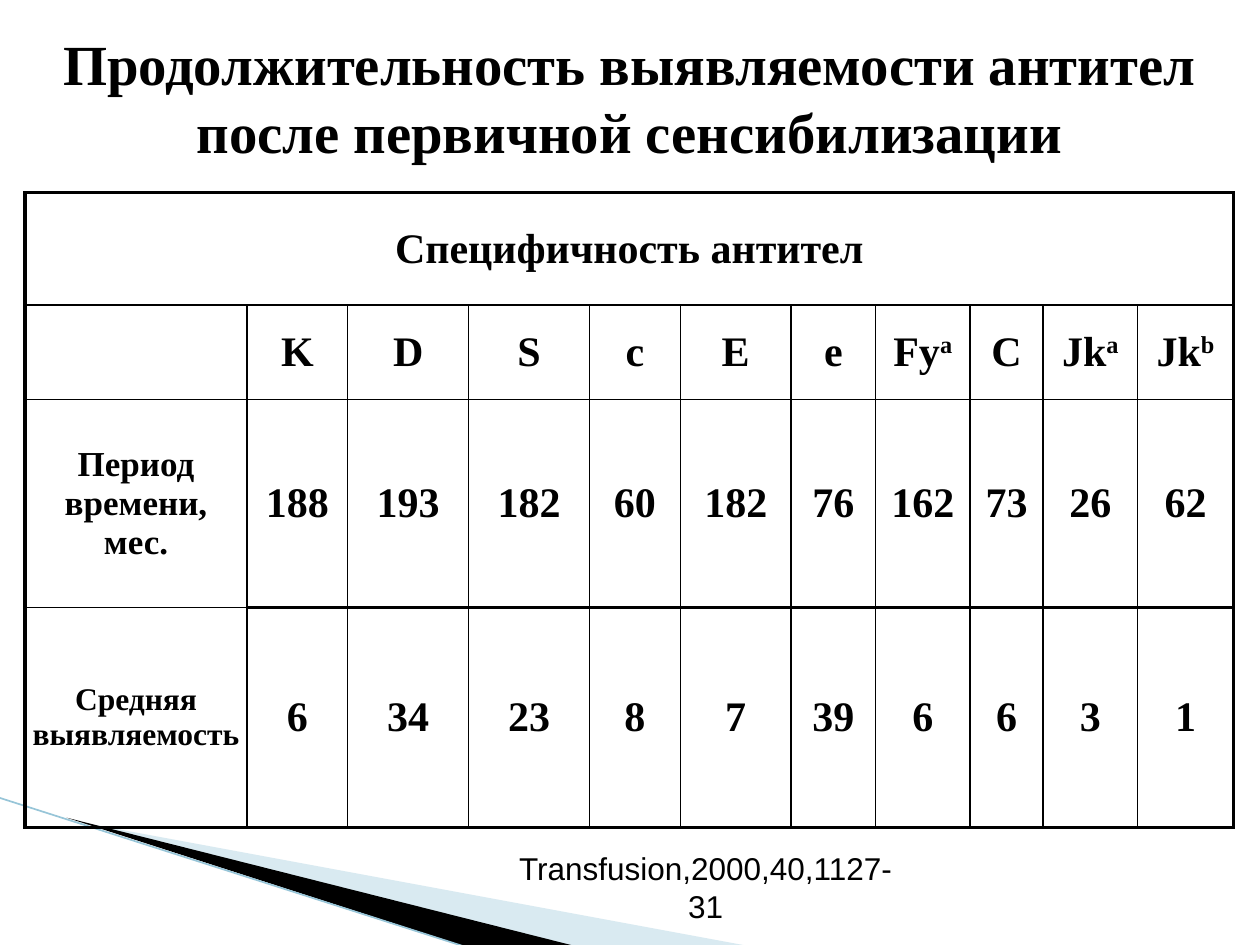
from lxml.etree import SubElement
from pptx import Presentation
from pptx.dml.color import RGBColor
from pptx.enum.shapes import MSO_CONNECTOR
from pptx.enum.text import MSO_ANCHOR, PP_ALIGN
from pptx.oxml import parse_xml
from pptx.oxml.ns import nsdecls, qn
from pptx.util import Inches, Pt

BLACK = RGBColor(0x00, 0x00, 0x00)
PALE_BLUE = RGBColor(0xA0, 0xCB, 0xDC)
LINE_BLUE = RGBColor(0x97, 0xC5, 0xD8)

THICK, THIN = 2.25, 1
COLUMN_WIDTHS = [1.76, 0.8, 0.96, 0.96, 0.72, 0.88, 0.67, 0.75, 0.58, 0.75, 0.76]
ROW_HEIGHTS = [0.89, 0.75, 1.65, 1.75]
HEADING = "Специфичность антител"
ANTIBODIES = ["K", "D", "S", "c", "E", "e", "Fy^a", "C", "Jk^a", "Jk^b"]
PERIODS = [188, 193, 182, 60, 182, 76, 162, 73, 26, 62]
DETECTABILITY = [6, 34, 23, 8, 7, 39, 6, 6, 3, 1]
ROWS = [
    [HEADING] + [""] * len(ANTIBODIES),
    [""] + ANTIBODIES,
    ["Период времени,\nмес."] + PERIODS,
    ["Средняя выявляемость"] + DETECTABILITY,
]
ROW_LABEL_SIZES = {2: 20, 3: 18}


def write_text(frame, text, size, font="Times New Roman", bold=True):
    """Write centred lines; the part after ^ is a superscript."""
    frame.vertical_anchor = MSO_ANCHOR.MIDDLE
    for index, line in enumerate(text.split("\n")):
        paragraph = frame.add_paragraph() if index else frame.paragraphs[0]
        paragraph.alignment = PP_ALIGN.CENTER
        for level, part in enumerate(line.split("^")):
            run = paragraph.add_run()
            run.text = part
            run.font.name, run.font.size, run.font.bold = font, Pt(size), bold
            run.font.color.rgb = BLACK
            if level:
                run.font._element.set("baseline", "30000")


def add_text(slide, box, text, size, wrap=True, **style):
    frame = slide.shapes.add_textbox(*map(Inches, box)).text_frame
    frame.word_wrap = wrap
    write_text(frame, text, size, **style)


def add_wedge(slide, points, color, opacity=100):
    start, *others = [(Inches(x), Inches(y)) for x, y in points]
    builder = slide.shapes.build_freeform(*start)
    builder.add_line_segments(others, close=True)
    wedge = builder.convert_to_shape()
    wedge.shadow.inherit = False
    wedge.fill.solid()
    wedge.fill.fore_color.rgb = color
    wedge.line.fill.background()
    if opacity < 100:
        solid = wedge._element.spPr.find(qn("a:solidFill"))
        SubElement(solid[0], qn("a:alpha"), val=str(opacity * 1000))


def add_corner_decoration(slide):
    add_wedge(slide, [(0.55, 6.51), (5.95, 7.51), (4.56, 7.51)], PALE_BLUE, 40)
    add_wedge(slide, [(0.53, 6.49), (4.57, 7.51), (3.72, 7.52)], BLACK)
    edge = slide.shapes.add_connector(
        MSO_CONNECTOR.STRAIGHT, Inches(-0.01), Inches(6.33), Inches(3.71), Inches(7.52))
    edge.line.color.rgb = LINE_BLUE
    edge.line.width = Pt(0.95)
    SubElement(edge._element.spPr, qn("a:effectLst"))


def set_borders(cell, widths):
    properties = cell._tc.get_or_add_tcPr()
    for position, (side, width) in enumerate(widths.items()):
        properties.insert(position, parse_xml(
            f'<a:ln{side} {nsdecls("a")} w="{Pt(width)}"><a:solidFill>'
            f'<a:srgbClr val="{BLACK}"/></a:solidFill></a:ln{side}>'))


def border_widths(row, column, span):
    """Thick outer frame, and a thick rule above the last row's values."""
    last_row = len(ROWS) - 1
    is_value = column > 0
    thick = {
        "L": column == 0,
        "R": column + span == len(COLUMN_WIDTHS),
        "T": row == 0 or (row == last_row and is_value),
        "B": row == last_row or (row == last_row - 1 and is_value),
    }
    return {side: THICK if heavy else THIN for side, heavy in thick.items()}


def add_antibody_table(slide, box):
    table = slide.shapes.add_table(
        len(ROWS), len(COLUMN_WIDTHS), *map(Inches, box)).table
    table.first_row = table.horz_banding = False
    for column, width in zip(table.columns, COLUMN_WIDTHS):
        column.width = Inches(width)
    for row, height in zip(table.rows, ROW_HEIGHTS):
        row.height = Inches(height)
    table.cell(0, 0).merge(table.cell(0, len(COLUMN_WIDTHS) - 1))

    for r, values in enumerate(ROWS):
        for c, value in enumerate(values):
            cell = table.cell(r, c)
            cell.fill.background()
            span = cell.span_width if cell.is_merge_origin else 1
            set_borders(cell, border_widths(r, c, span))
            cell.margin_left = cell.margin_right = Inches(0.02)
            cell.margin_top = cell.margin_bottom = Inches(0.04)
            cell.vertical_anchor = MSO_ANCHOR.MIDDLE
            if value != "":
                size = ROW_LABEL_SIZES.get(r, 24) if c == 0 else 24
                write_text(cell.text_frame, str(value), size)


def main():
    presentation = Presentation()
    presentation.slide_width, presentation.slide_height = Inches(10), Inches(7.5)
    slide = presentation.slides.add_slide(presentation.slide_layouts[6])
    add_corner_decoration(slide)
    add_text(slide, (0.2, 0.26, 9.59, 1.01),
             "Продолжительность выявляемости антител после первичной сенсибилизации", 32.4)
    add_antibody_table(slide, (0.2, 1.53, 9.59, 5.04))
    add_text(slide, (3.98, 6.9, 3.24, 0.28), "Transfusion,2000,40,1127-31", 18,
             wrap=False, font="Arial", bold=False)
    presentation.save("out.pptx")


if __name__ == "__main__":
    main()
